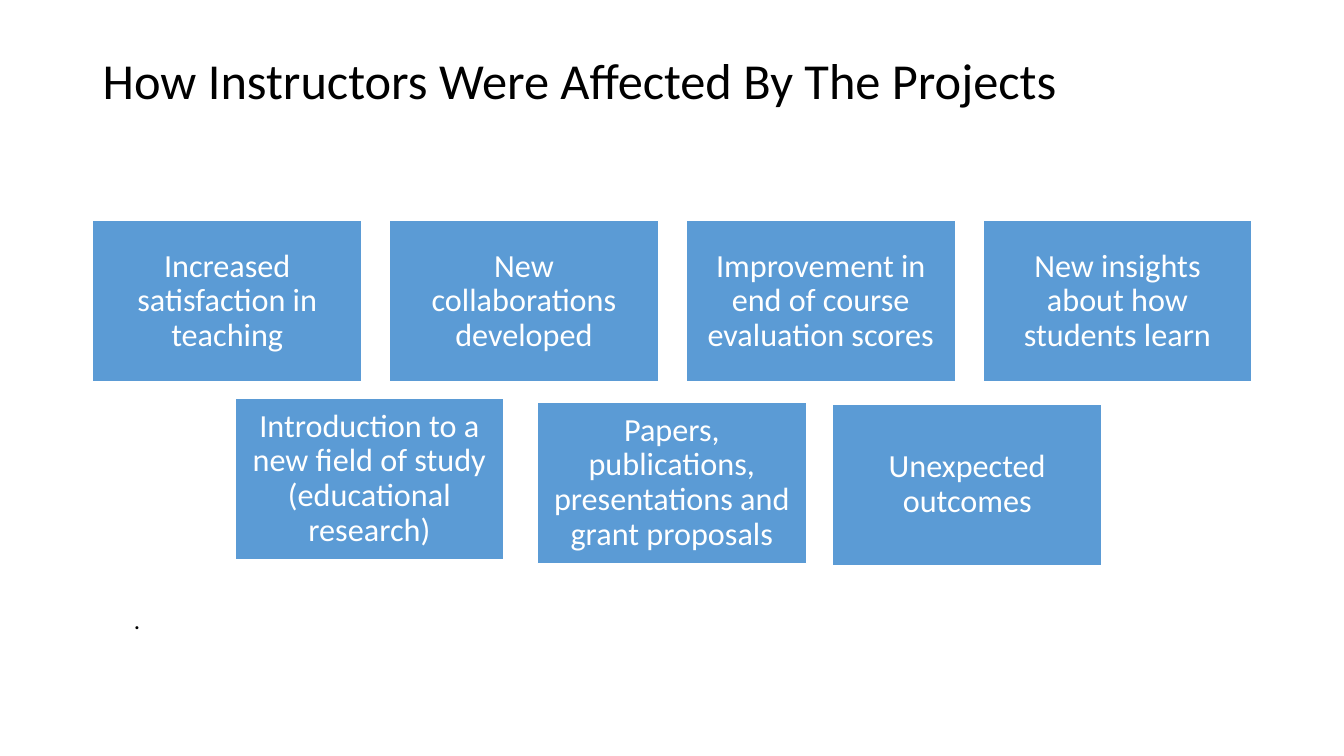
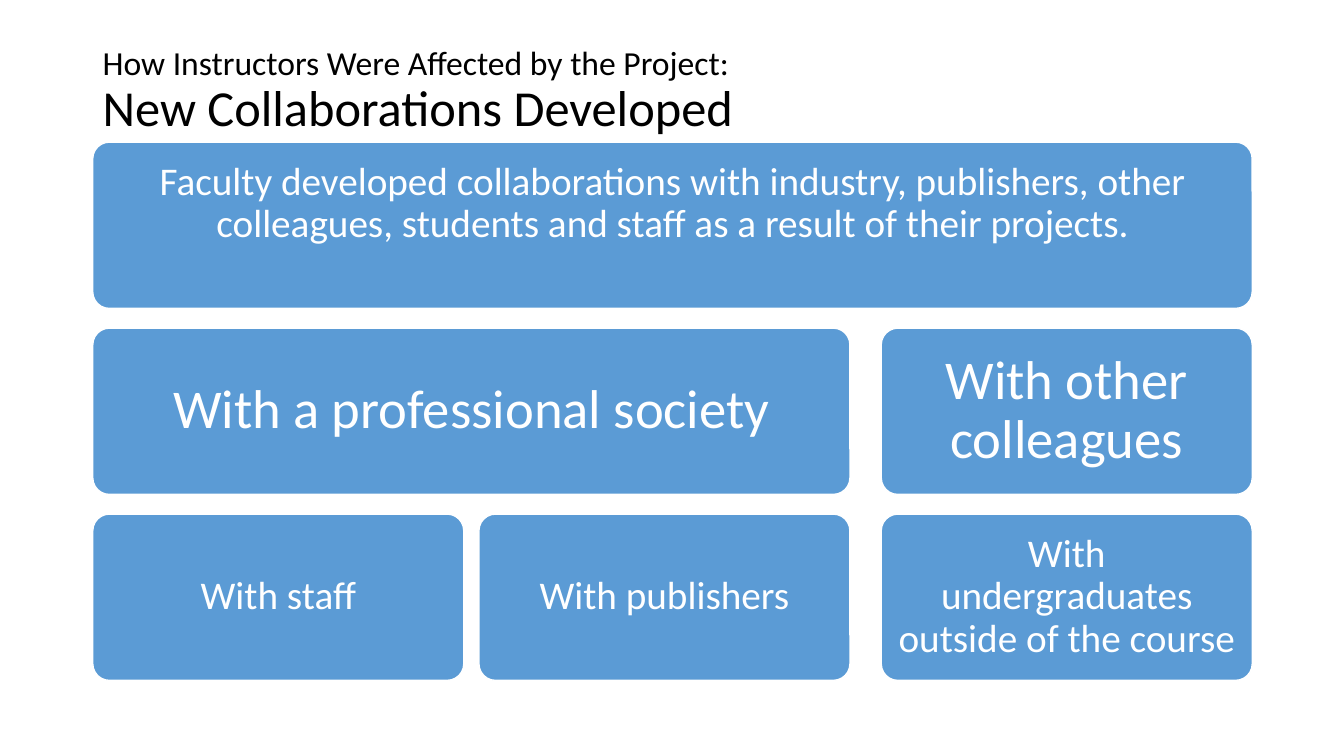
from pptx import Presentation
from pptx.dml.color import RGBColor
from pptx.enum.shapes import MSO_SHAPE as Shape
from pptx.enum.text import MSO_ANCHOR as Anchor, PP_ALIGN as Align
from pptx.util import Inches, Pt

BLUE = RGBColor(0x5B, 0x9B, 0xD5)
WHITE = RGBColor(0xFF, 0xFF, 0xFF)
BLACK = RGBColor(0x00, 0x00, 0x00)
FONT = "Calibri"

LEFT, WIDTH = 0.92, 11.5

EFFECTS_TITLE = [("How Instructors Were Affected By The Projects", 36)]
EFFECTS_TOP_ROW = [
    "Increased satisfaction in teaching",
    "New collaborations developed",
    "Improvement in end of course evaluation scores",
    "New insights about how students learn",
]
EFFECTS_LOWER_ROW = [
    ("Introduction to a new field of study (educational research)", 2.33, 3.95),
    ("Papers, publications, presentations and grant proposals", 5.33, 3.99),
    ("Unexpected outcomes", 8.26, 4.01),
]
CLOSING_MARK = "."

COLLABORATION_TITLE = [
    ("How Instructors Were Affected by the Project:", 24),
    ("New Collaborations Developed", 36),
]
COLLABORATION_SUMMARY = (
    "Faculty developed collaborations with industry, publishers, other "
    "colleagues, students and staff as a result of their projects."
)
# (text, row, first column, last column, size, inset, extra bottom inset)
COLLABORATIONS = [
    (COLLABORATION_SUMMARY, 0, 0, 2, 28, 0.12, 0.43),
    ("With a professional society", 1, 0, 1, 39, 0.16, 0),
    ("With other colleagues", 1, 2, 2, 39, 0.16, 0),
    ("With staff", 2, 0, 0, 28, 0.12, 0),
    ("With publishers", 2, 1, 1, 28, 0.12, 0),
    ("With undergraduates outside of the course", 2, 2, 2, 28, 0.12, 0),
]


def write_lines(frame, lines, color, align=Align.LEFT, spacing=0.9):
    frame.word_wrap = True
    frame.text = "\n".join(text for text, size in lines)
    for para, (text, size) in zip(frame.paragraphs, lines):
        para.alignment = align
        para.line_spacing = spacing
        font = para.runs[0].font
        font.name, font.size, font.color.rgb = FONT, Pt(size), color


def add_text(page, lines, left, top, width, height, anchor=Anchor.TOP, spacing=0.9):
    box = page.shapes.add_textbox(*map(Inches, (left, top, width, height)))
    box.text_frame.vertical_anchor = anchor
    write_lines(box.text_frame, lines, BLACK, spacing=spacing)


def add_title(page, lines, top):
    add_text(page, lines, LEFT, top, WIDTH, 1.45, Anchor.MIDDLE)


def add_card(page, kind, text, size, left, top, width, height, inset, extra_bottom=0):
    card = page.shapes.add_shape(kind, *map(Inches, (left, top, width, height)))
    card.shadow.inherit = False
    card.fill.solid()
    card.fill.fore_color.rgb = BLUE
    card.line.color.rgb = WHITE
    card.line.width = Pt(1)
    if kind == Shape.ROUNDED_RECTANGLE:
        card.adjustments[0] = 0.1
    frame = card.text_frame
    frame.margin_left = frame.margin_right = frame.margin_top = Inches(inset)
    frame.margin_bottom = Inches(inset + extra_bottom)
    frame.vertical_anchor = Anchor.MIDDLE
    write_lines(frame, [(text, size)], WHITE, Align.CENTER)


def build_effects(page):
    card_width, card_height = 2.67, 1.6
    pitch = (WIDTH - card_width) / (len(EFFECTS_TOP_ROW) - 1)
    top_row = [
        (text, LEFT + column * pitch, 2.19)
        for column, text in enumerate(EFFECTS_TOP_ROW)
    ]
    add_title(page, EFFECTS_TITLE, 0.1)
    for text, left, top in top_row + EFFECTS_LOWER_ROW:
        add_card(page, Shape.RECTANGLE, text, 23, left, top, card_width, card_height, 0.1)
    add_text(page, [(CLOSING_MARK, 18)], 1.23, 5.95, 10.56, 0.4, spacing=1.0)


def build_collaborations(page):
    column_lefts, column_width = [LEFT, 4.75, 8.74], 3.68
    first_top, last_top, card_height = 1.41, 5.1, 1.65
    row_pitch = (last_top - first_top) / 2
    add_title(page, COLLABORATION_TITLE, 0.19)
    for text, row, first, last, size, inset, extra_bottom in COLLABORATIONS:
        left = column_lefts[first]
        width = column_lefts[last] + column_width - left
        top = first_top + row * row_pitch
        add_card(page, Shape.ROUNDED_RECTANGLE, text, size, left, top,
                 width, card_height, inset, extra_bottom)


def main():
    deck = Presentation()
    deck.slide_width, deck.slide_height = Inches(13.33), Inches(7.5)
    blank = deck.slide_layouts[6]
    for build in (build_effects, build_collaborations):
        build(deck.slides.add_slide(blank))
    deck.save("out.pptx")


if __name__ == "__main__":
    main()
